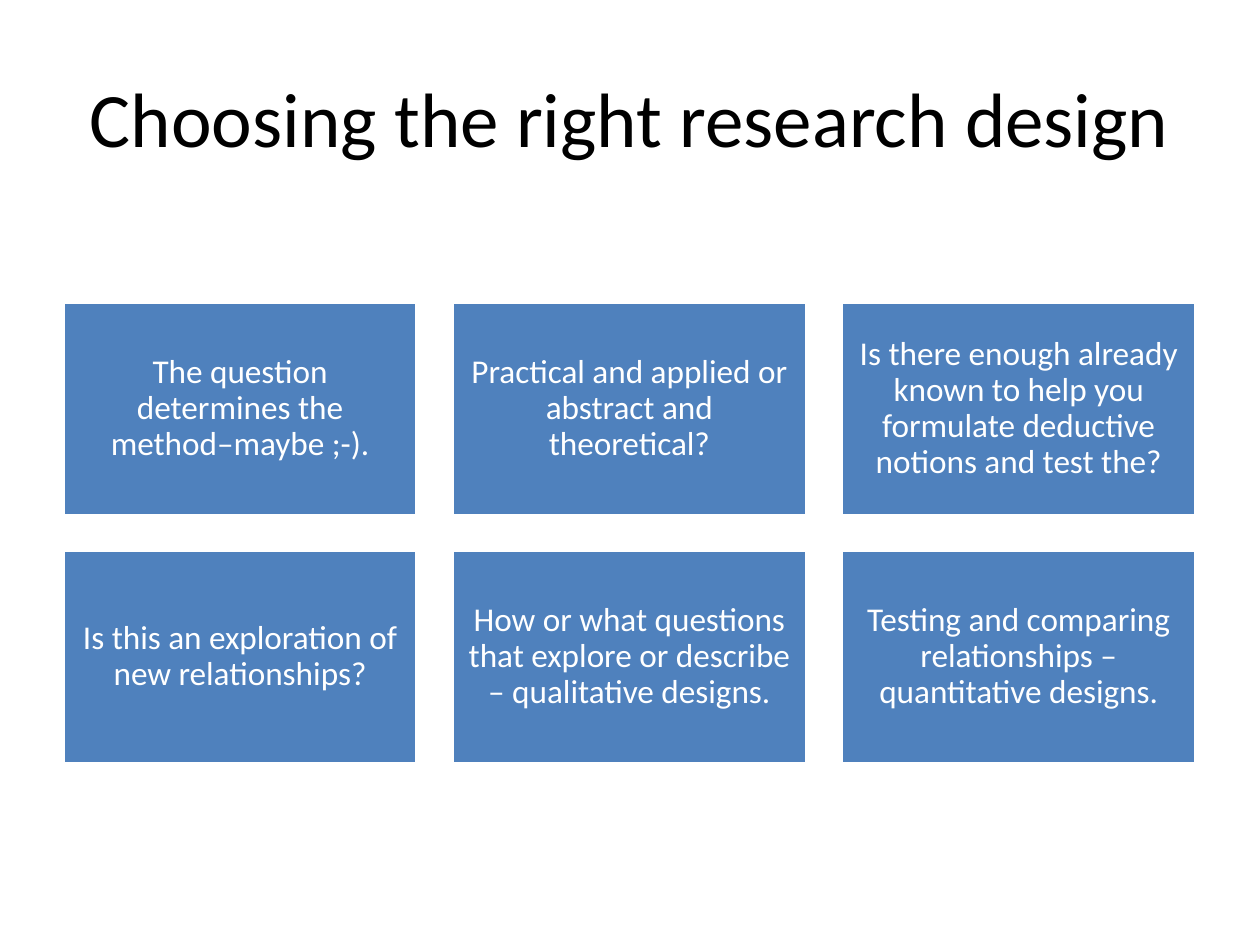
from dataclasses import dataclass

from pptx import Presentation
from pptx.dml.color import RGBColor
from pptx.enum.shapes import MSO_SHAPE as Shape
from pptx.enum.text import MSO_ANCHOR as Anchor, PP_ALIGN as Align
from pptx.util import Inches, Pt


@dataclass(frozen=True)
class Theme:
    font: str = "Calibri"
    ink: RGBColor = RGBColor(0x00, 0x00, 0x00)
    paper: RGBColor = RGBColor(0xFF, 0xFF, 0xFF)
    card: RGBColor = RGBColor(0x4F, 0x81, 0xBD)
    title_size: int = 44
    card_size: int = 19
    border: int = 2


class SlideBuilder:
    """Holds the theme and the current slide."""

    def __init__(self, slide, theme):
        self.s = slide
        self.theme = theme

    def set_text(self, sp, text, size, color, inset_x, inset_y, spacing=1.0):
        tf = sp.text_frame
        frame_format = {
            "word_wrap": True,
            "vertical_anchor": Anchor.MIDDLE,
            "margin_left": Inches(inset_x),
            "margin_right": Inches(inset_x),
            "margin_top": Inches(inset_y),
            "margin_bottom": Inches(inset_y),
        }
        for name, value in frame_format.items():
            setattr(tf, name, value)
        p = tf.paragraphs[0]
        p.alignment = Align.CENTER
        p.line_spacing = spacing
        r = p.add_run()
        r.text = text
        for name, value in {"name": self.theme.font, "size": Pt(size)}.items():
            setattr(r.font, name, value)
        r.font.color.rgb = color

    def title(self, text, *box):
        sp = self.s.shapes.add_textbox(*map(Inches, box))
        self.set_text(sp, text, self.theme.title_size, self.theme.ink, 0.1, 0.05)

    def card(self, text, *box):
        sp = self.s.shapes.add_shape(Shape.RECTANGLE, *map(Inches, box))
        sp.shadow.inherit = False
        sp.fill.solid()
        sp.fill.fore_color.rgb = self.theme.card
        sp.line.color.rgb = self.theme.paper
        sp.line.width = Pt(self.theme.border)
        self.set_text(sp, text, self.theme.card_size, self.theme.paper,
                      0.08, 0.08, spacing=0.9)


QUESTIONS = [
    "The question determines the method–maybe ;-).",
    "Practical and applied or abstract and theoretical?",
    "Is there enough already known to help you formulate deductive notions and test the?",
    "Is this an exploration of new relationships?",
    "How or what questions that explore or describe – qualitative designs.",
    "Testing and comparing relationships – quantitative designs.",
]

# Card grid, in inches
COLUMNS = 3
LEFT, TOP = 0.5, 2.4
CARD_W, CARD_H = 2.81, 1.69
GAP = 0.28


def main():
    prs = Presentation()
    prs.slide_width, prs.slide_height = Inches(10), Inches(7.5)
    builder = SlideBuilder(prs.slides.add_slide(prs.slide_layouts[6]), Theme())

    # Title
    builder.title("Choosing the right research design", 0.5, 0.3, 9, 1.25)

    # Question cards, row by row
    for i, question in enumerate(QUESTIONS):
        row, col = divmod(i, COLUMNS)
        builder.card(question, LEFT + col * (CARD_W + GAP),
                     TOP + row * (CARD_H + GAP), CARD_W, CARD_H)

    prs.save("out.pptx")


if __name__ == "__main__":
    main()
